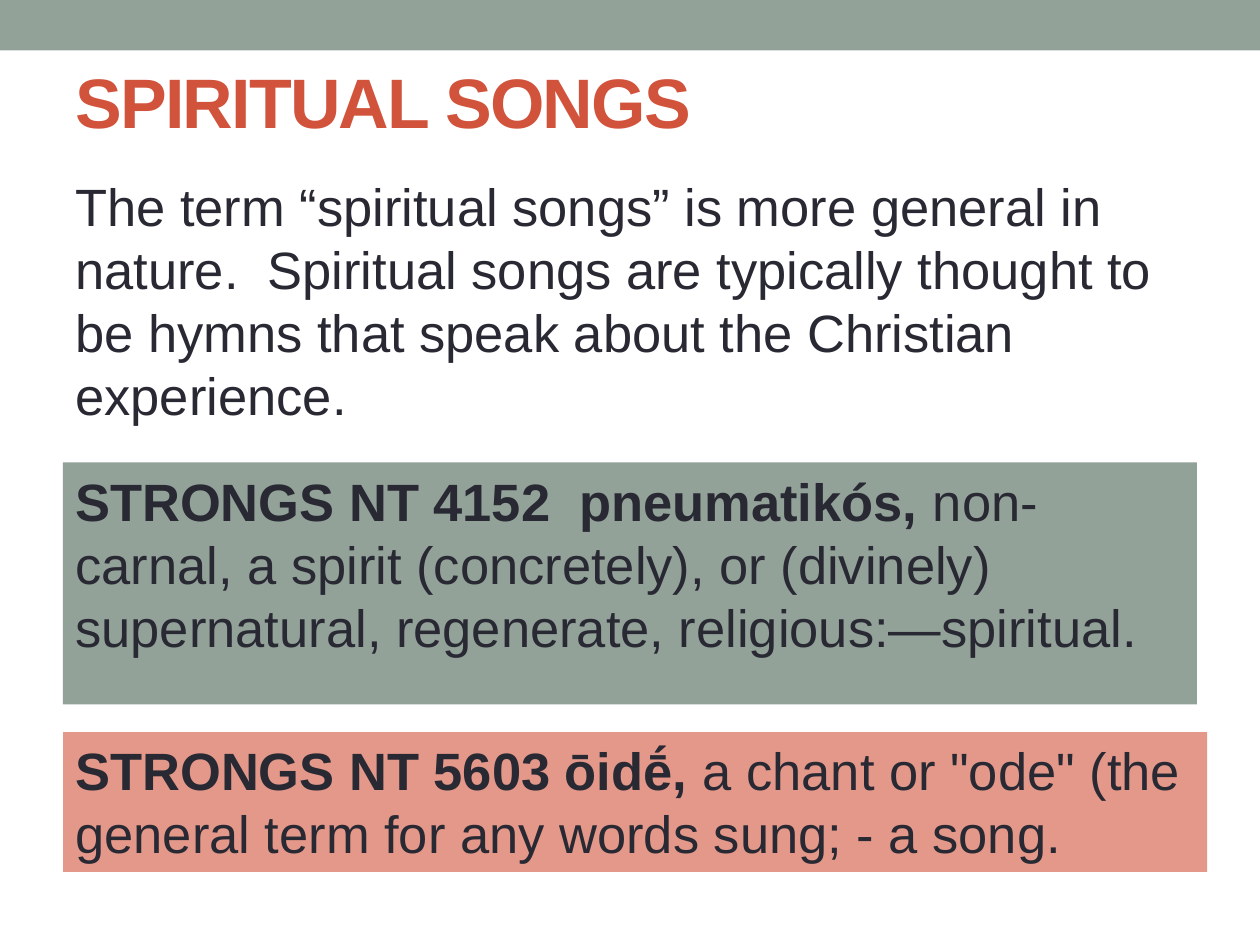
from pptx import Presentation
from pptx.dml.color import RGBColor
from pptx.enum.shapes import MSO_SHAPE as Shape
from pptx.enum.text import MSO_ANCHOR as Anchor, PP_ALIGN as Align
from pptx.util import Inches, Pt

WIDTH, HEIGHT = 10, 7.5
MARGIN = WIDTH * 0.05
SAGE, CORAL, RUST, INK = "93A299", "E4988A", "D2533C", "292934"

# Content: top, width, height, fill, anchor, letter spacing, runs (text, size, colour, bold)
BLOCKS = [
    (0.17, 9, 1.25, None, Anchor.MIDDLE, -100,
     [("SPIRITUAL SONGS", 40, RUST, True)]),
    (1.33, 8.83, 1.62, None, Anchor.TOP, None,
     [("The term “spiritual songs” is more general in nature.  Spiritual songs are "
       "typically thought to be hymns that speak about the Christian experience.",
       30, INK, False)]),
    (3.67, 9, 1.92, SAGE, Anchor.TOP, None,
     [("STRONGS NT 4152  pneumatikós,", 30, INK, True),
      (" non-carnal, a spirit (concretely), or (divinely) supernatural, "
       "regenerate, religious:—spiritual.", 30, INK, False)]),
    (5.81, 9.08, 1.11, CORAL, Anchor.TOP, None,
     [("STRONGS NT 5603 ōidḗ,", 30, INK, True),
      (' a chant or "ode" (the general term for any words sung; - a song.',
       30, INK, False)]),
]


def colour(hex_value):
    return RGBColor.from_string(hex_value)


def add_panel(slide, left, top, width, height, fill):
    box = [Inches(length) for length in (left, top, width, height)]
    if fill is None:
        return slide.shapes.add_textbox(*box)
    panel = slide.shapes.add_shape(Shape.RECTANGLE, *box)
    panel.shadow.inherit = False
    panel.fill.solid()
    panel.fill.fore_color.rgb = colour(fill)
    panel.line.fill.background()
    return panel


def write(frame, anchor, spacing, runs):
    frame.word_wrap = True
    frame.vertical_anchor = anchor
    paragraph = frame.paragraphs[0]
    paragraph.alignment = Align.LEFT
    for text, size, ink, bold in runs:
        run = paragraph.add_run()
        run.text = text
        for key, value in {"name": "Arial", "size": Pt(size), "bold": bold}.items():
            setattr(run.font, key, value)
        run.font.color.rgb = colour(ink)
        if spacing is not None:
            run.font._element.set("spc", str(spacing))


def main():
    deck = Presentation()
    deck.slide_width, deck.slide_height = Inches(WIDTH), Inches(HEIGHT)
    slide = deck.slides.add_slide(deck.slide_layouts[6])

    # Band across the top
    add_panel(slide, 0, 0, WIDTH, 0.4, SAGE)

    # Title, explanation and the two definitions
    for top, width, height, fill, anchor, spacing, runs in BLOCKS:
        panel = add_panel(slide, MARGIN, top, width, height, fill)
        write(panel.text_frame, anchor, spacing, runs)

    deck.save("out.pptx")


if __name__ == "__main__":
    main()
